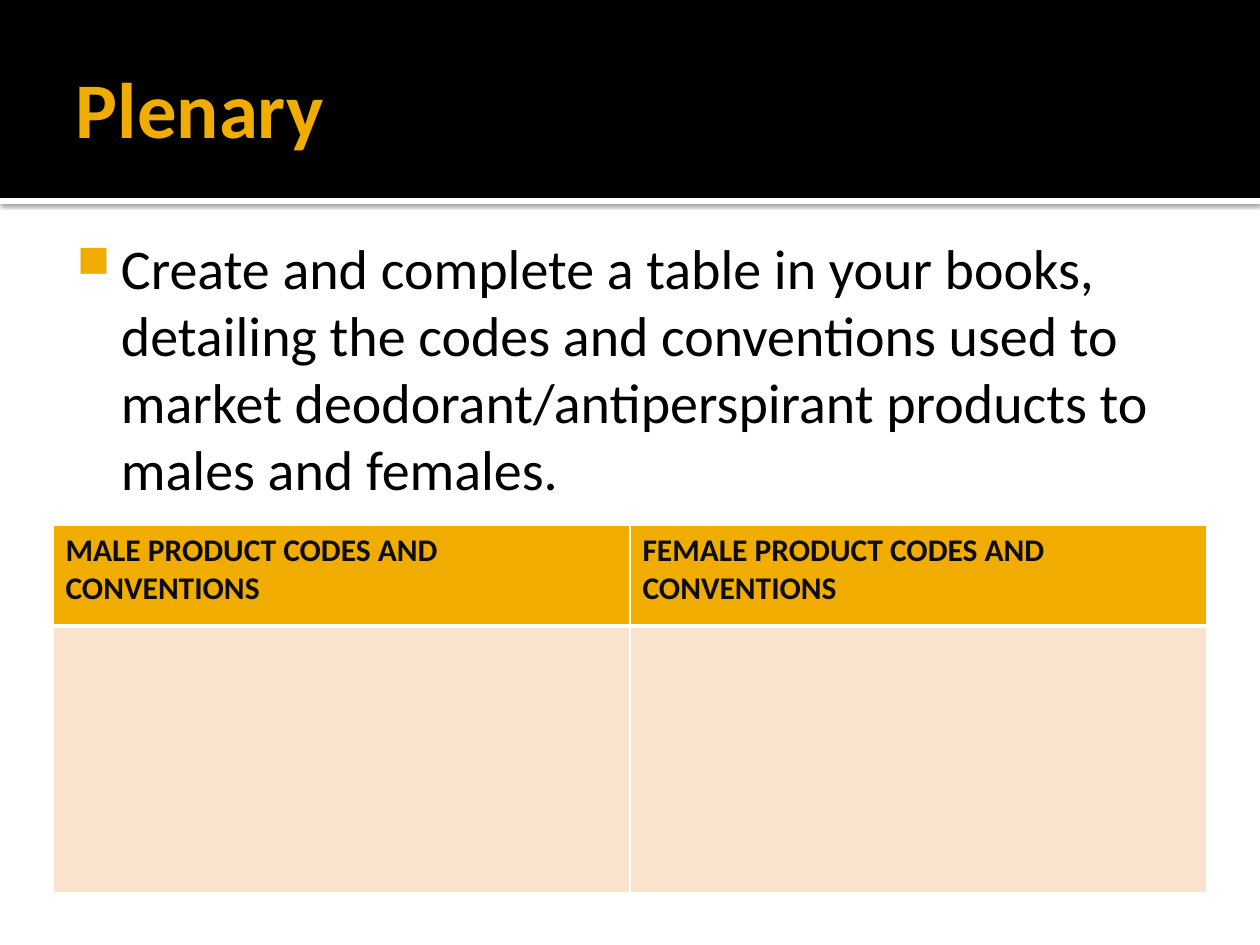
"""Build the plenary slide with its task and an empty two-column table."""
from dataclasses import dataclass

from lxml import etree
from pptx import Presentation
from pptx.dml.color import RGBColor
from pptx.enum.shapes import MSO_SHAPE
from pptx.enum.text import MSO_ANCHOR
from pptx.oxml.ns import qn
from pptx.util import Emu, Pt

RECTANGLE = MSO_SHAPE.RECTANGLE
TOP, MIDDLE = MSO_ANCHOR.TOP, MSO_ANCHOR.MIDDLE
WHITE = RGBColor(0xFF, 0xFF, 0xFF)
BLACK = RGBColor(0x00, 0x00, 0x00)
AMBER = RGBColor(0xF0, 0xAD, 0x00)
PEACH = RGBColor(0xF9, 0xE3, 0xCC)
CHARCOAL = RGBColor(0x0D, 0x0D, 0x0D)
FONT = "Calibri"
PX_PER_INCH = 126

HEADINGS = ["MALE PRODUCT CODES AND CONVENTIONS", "FEMALE PRODUCT CODES AND CONVENTIONS"]
COLUMN_WIDTH = 577
ROW_HEIGHTS = [101, 267]
ROW_FILLS = [AMBER, PEACH]
BOTTOM_BORDERS = [3, 1]


@dataclass(frozen=True)
class Area:
    left: int
    top: int
    width: int
    height: int

    def emu(self) -> list[Emu]:
        return [px(value) for value in (self.left, self.top, self.width, self.height)]


@dataclass(frozen=True)
class Style:
    size: int
    color: RGBColor
    bold: bool = False


@dataclass(frozen=True)
class TextBlock:
    text: str
    area: Area
    style: Style
    anchor: MSO_ANCHOR
    insets: tuple[int, int, int, int]


TITLE = TextBlock("Plenary", Area(63, 21, 1134, 173), Style(45, AMBER, True), MIDDLE, (13, 6, 6, 6))
TASK = TextBlock(
    "Create and complete a table in your books, detailing the codes and conventions "
    "used to market deodorant/antiperspirant products to males and females.",
    Area(53, 220, 1134, 638), Style(32, BLACK), TOP, (8, 13, 13, 6))
HEADING_STYLE = Style(18, CHARCOAL, True)


def px(value: int) -> Emu:
    return Emu(round(value * 914400 / PX_PER_INCH))


def add_node(parent, tag: str, **attributes):
    return etree.SubElement(parent, qn(tag), attributes)


def format_text(para, style: Style) -> None:
    for span in para.runs:
        span.font.name = FONT
        span.font.size = Pt(style.size)
        span.font.bold = style.bold
        span.font.color.rgb = style.color


def add_band(page, area: Area, color: RGBColor):
    band = page.shapes.add_shape(RECTANGLE, *area.emu())
    band.shadow.inherit = False
    band.fill.solid()
    band.fill.fore_color.rgb = color
    band.line.fill.background()
    return band


def add_drop_shadow(band) -> None:
    effects = band._element.spPr.find(qn("a:effectLst"))
    shadow = add_node(effects, "a:outerShdw", blurRad=str(Pt(2.5)), dist=str(Pt(0.8)),
                      dir="5400000", algn="t", rotWithShape="0")
    color = add_node(shadow, "a:srgbClr", val=str(BLACK))
    add_node(color, "a:alpha", val="60000")


def add_text(page, block: TextBlock):
    box = page.shapes.add_textbox(*block.area.emu())
    frame = box.text_frame
    frame.word_wrap = True
    frame.vertical_anchor = block.anchor
    (frame.margin_left, frame.margin_top,
     frame.margin_right, frame.margin_bottom) = map(px, block.insets)
    frame.text = block.text
    format_text(frame.paragraphs[0], block.style)
    return frame.paragraphs[0]


def add_bullet(para) -> None:
    properties = para._p.get_or_add_pPr()
    properties.set("marL", str(px(60)))
    properties.set("indent", str(px(-44)))
    color = add_node(properties, "a:buClr")
    add_node(color, "a:srgbClr", val=str(AMBER))
    add_node(properties, "a:buSzPct", val="80000")
    add_node(properties, "a:buChar", char="■")


def set_borders(cell, widths: dict[str, int]) -> None:
    properties = cell._tc.get_or_add_tcPr()
    for side, width in widths.items():
        line = add_node(properties, f"a:ln{side}", w=str(Pt(width)))
        fill = add_node(line, "a:solidFill")
        add_node(fill, "a:srgbClr", val=str(WHITE))


def add_codes_table(page) -> None:
    area = Area(53, 525, COLUMN_WIDTH * len(HEADINGS), sum(ROW_HEIGHTS))
    table = page.shapes.add_table(len(ROW_HEIGHTS), len(HEADINGS), *area.emu()).table
    table.first_row = False
    table.horz_banding = False
    for column in table.columns:
        column.width = px(COLUMN_WIDTH)
    for index, row in enumerate(table.rows):
        row.height = px(ROW_HEIGHTS[index])
        top = BOTTOM_BORDERS[index - 1] if index else 1
        for cell in row.cells:
            set_borders(cell, {"L": 1, "R": 1, "T": top, "B": BOTTOM_BORDERS[index]})
            cell.fill.solid()
            cell.fill.fore_color.rgb = ROW_FILLS[index]
    for cell, heading in zip(table.rows[0].cells, HEADINGS):
        cell.text_frame.text = heading
        format_text(cell.text_frame.paragraphs[0], HEADING_STYLE)


def main() -> None:
    deck = Presentation()
    deck.slide_width, deck.slide_height = px(1260), px(945)
    page = deck.slides.add_slide(deck.slide_layouts[6])
    add_drop_shadow(add_band(page, Area(0, 198, 1260, 6), WHITE))
    add_band(page, Area(0, 0, 1260, 198), BLACK)
    add_text(page, TITLE)
    add_bullet(add_text(page, TASK))
    add_codes_table(page)
    deck.save("out.pptx")


if __name__ == "__main__":
    main()
